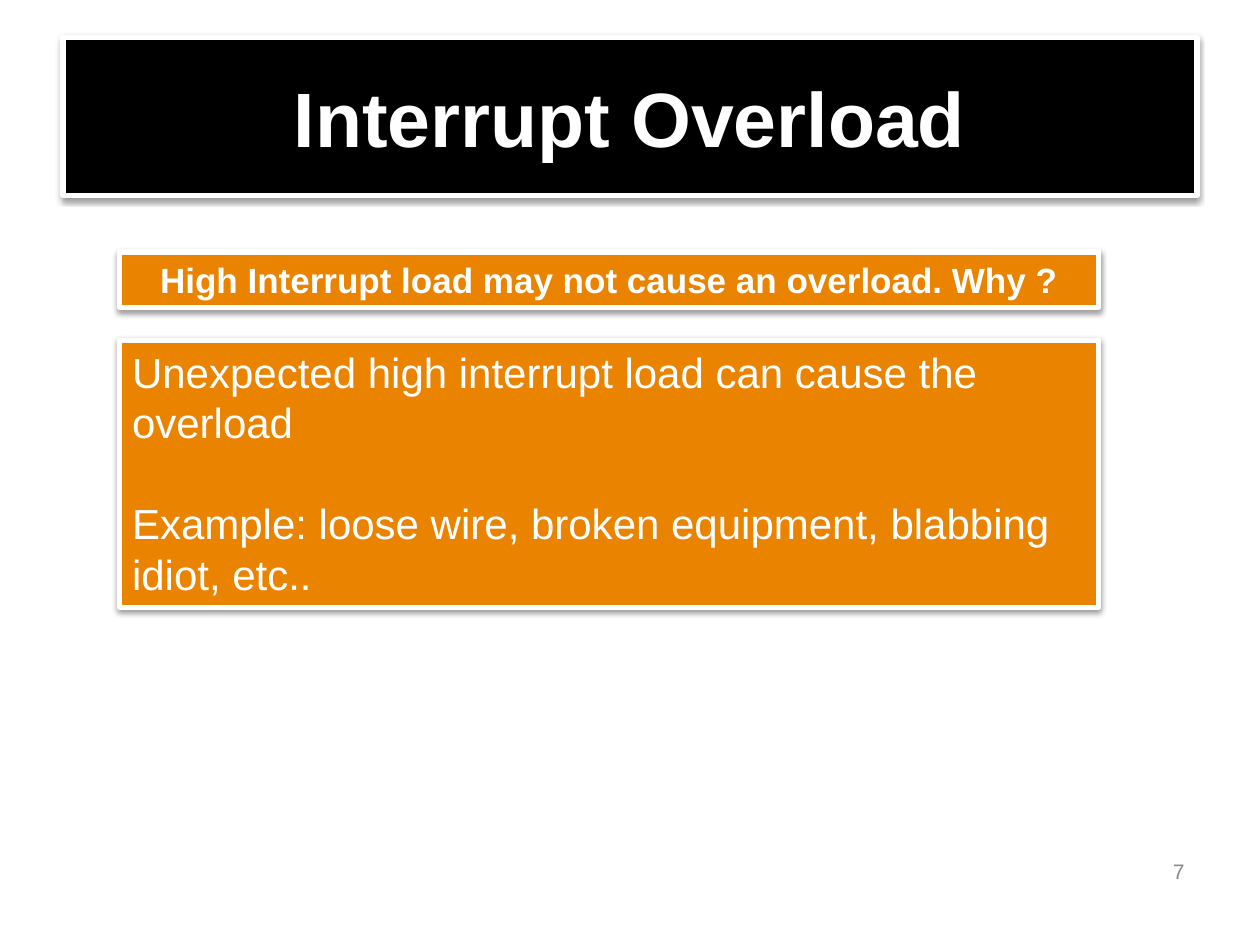
"""Build the Interrupt Overload slide."""
from lxml import etree
from pptx import Presentation
from pptx.dml.color import RGBColor
from pptx.enum import shapes, text
from pptx.oxml import ns
from pptx.util import Inches, Pt

HUES = {"black": "000000", "white": "FFFFFF", "orange": "E98300", "gray": "898989"}
ALIGN = text.PP_ALIGN
MID, TOP = text.MSO_ANCHOR.MIDDLE, text.MSO_ANCHOR.TOP


def shade(shape):
    shape.shadow.inherit = False
    glow = shape._element.spPr.find(ns.qn("a:effectLst"))
    drop = etree.SubElement(glow, ns.qn("a:outerShdw"), blurRad=str(Pt(3.1)),
                            dist=str(Pt(1.6)), dir="5400000", rotWithShape="0")
    tint = etree.SubElement(drop, ns.qn("a:srgbClr"), val=HUES["black"])
    etree.SubElement(tint, ns.qn("a:alpha"), val="38000")


def write(frame, lines, size, hue, align, bold=False):
    frame.word_wrap = True
    frame.text = "\n".join(lines)
    for para in frame.paragraphs:
        para.alignment = align
        para.font.name = "Arial"
        para.font.size = Pt(size)
        para.font.bold = bold
        para.font.color.rgb = RGBColor.from_string(HUES[hue])


deck = Presentation()
deck.slide_width, deck.slide_height = Inches(10), Inches(7.5)
slide = deck.slides.add_slide(deck.slide_layouts[6])

panels = [
    ((0.5, 0.3, 9, 1.25), "black", ["Interrupt Overload"], 44, ALIGN.CENTER, True, MID),
    ((0.95, 2, 7.77, 0.44), "orange",
     ["High Interrupt load may not cause an overload. Why ?"], 20, ALIGN.CENTER, True, TOP),
    ((0.95, 2.7, 7.77, 2.12), "orange",
     ["Unexpected high interrupt load can cause the overload",
      "Example: loose wire, broken equipment, blabbing idiot, etc.."],
     24, ALIGN.LEFT, False, TOP),
]
for place, fill, lines, size, align, bold, anchor in panels:
    panel = slide.shapes.add_shape(shapes.MSO_SHAPE.RECTANGLE, *map(Inches, place))
    panel.fill.solid()
    panel.fill.fore_color.rgb = RGBColor.from_string(HUES[fill])
    panel.line.color.rgb = RGBColor.from_string(HUES["white"])
    panel.line.width = Pt(3)
    shade(panel)
    panel.text_frame.vertical_anchor = anchor
    write(panel.text_frame, lines, size, "white", align, bold)

body = panel.text_frame.paragraphs
for para in body:
    para.line_spacing = Pt(28.8)
body[1].space_before = Pt(28.8)

page = slide.shapes.add_textbox(*map(Inches, (8.64, 6.66, 0.86, 0.4)))
page.text_frame.vertical_anchor = text.MSO_ANCHOR.BOTTOM
write(page.text_frame, ["7"], 12, "gray", ALIGN.RIGHT)

deck.save("out.pptx")
